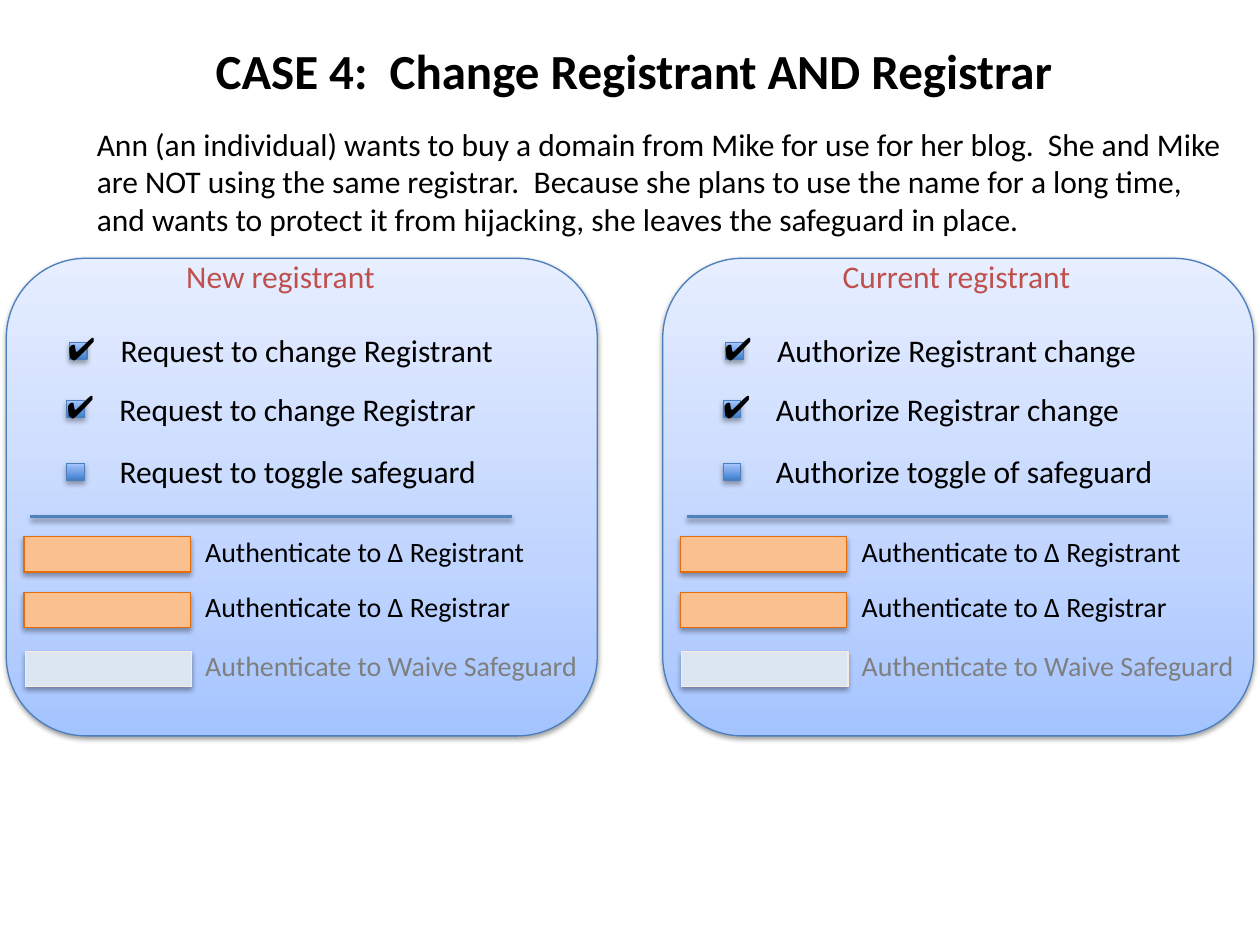
"""Build the slide on changing both the registrant and the registrar of a domain."""
from copy import deepcopy

from pptx import Presentation
from pptx.dml.color import RGBColor
from pptx.enum.shapes import MSO_CONNECTOR, MSO_SHAPE
from pptx.enum.text import MSO_ANCHOR, MSO_AUTO_SIZE, PP_ALIGN
from pptx.oxml import parse_xml
from pptx.oxml.ns import nsdecls, qn
from pptx.util import Inches, Pt

BLACK = RGBColor(0x00, 0x00, 0x00)
GRAY = RGBColor(0x7F, 0x7F, 0x7F)
RED = RGBColor(0xC0, 0x50, 0x4D)
BLUE = RGBColor(0x4F, 0x81, 0xBD)
OUTLINE = RGBColor(0x4B, 0x7E, 0xBC)
SKY = RGBColor(0xA4, 0xC4, 0xFF)
PALE_SKY = RGBColor(0xBF, 0xD4, 0xFF)
MIST = RGBColor(0xE6, 0xEE, 0xFF)
DEEP_BLUE = RGBColor(0x3F, 0x80, 0xCE)
ORANGE = RGBColor(0xFA, 0xC0, 0x90)
DARK_ORANGE = RGBColor(0xE4, 0x6C, 0x0A)
ICE = RGBColor(0xDC, 0xE6, 0xF2)
CREAM = RGBColor(0xFD, 0xEA, 0xDA)

PANEL_STOPS = [(0, SKY), (0.35, PALE_SKY), (1, MIST)]
CHECKBOX_STOPS = [(0, DEEP_BLUE), (1, SKY)]


def add_shadow(sp, alpha, distance):
    sp.element.spPr.append(parse_xml(
        f'<a:effectLst {nsdecls("a")}><a:outerShdw blurRad="{Pt(3.1)}" '
        f'dist="{Pt(distance)}" dir="5400000" rotWithShape="0"><a:srgbClr val="000000">'
        f'<a:alpha val="{alpha * 1000}"/></a:srgbClr></a:outerShdw></a:effectLst>'))


def add_text(shapes, text, x, y, w, h, size=18, color=BLACK, font="Calibri", wrap=False):
    tf = shapes.add_textbox(Inches(x), Inches(y), Inches(w), Inches(h)).text_frame
    tf.word_wrap = wrap
    tf.auto_size = MSO_AUTO_SIZE.SHAPE_TO_FIT_TEXT
    p = tf.paragraphs[0]
    p.text = text
    p.font.name, p.font.size, p.font.color.rgb = font, Pt(size), color


prs = Presentation()
prs.slide_width, prs.slide_height = Inches(10), Inches(7.5)
s = prs.slides.add_slide(prs.slide_layouts[5])

title = s.shapes.title
title.left, title.top, title.width, title.height = (Inches(v) for v in (1.55, 0.27, 6.96, 0.57))
tf = title.text_frame
tf.word_wrap = False
tf.auto_size = MSO_AUTO_SIZE.NONE
tf.vertical_anchor = MSO_ANCHOR.TOP
p = tf.paragraphs[0]
p.text = "CASE 4:  Change Registrant AND Registrar"
p.alignment = PP_ALIGN.CENTER
p.font.name, p.font.size, p.font.bold, p.font.color.rgb = "Calibri", Pt(28), True, BLACK

add_text(s.shapes, "Ann (an individual) wants to buy a domain from Mike for use for her blog.  "
         "She and Mike are NOT using the same registrar.  Because she plans to use the name "
         "for a long time, and wants to protect it from hijacking, she leaves the safeguard "
         "in place.", 0.67, 0.94, 9.17, 1.01, wrap=True)

panels = [
    (0.05, "New registrant", 1.73,
     [("Request to change Registrant", 3.33), ("Request to change Registrar", 3.2),
      ("Request to toggle safeguard", 3.08)]),
    (5.26, "Current registrant", 2.04,
     [("Authorize Registrant change", 3.1), ("Authorize Registrar change", 2.97),
      ("Authorize toggle of safeguard", 3.24)]),
]
option_rows = [(0.5, 2.72, 0.81, 2.58), (0.48, 3.18, 0.8, 3.05), (0.48, 3.68, 0.8, 3.54)]
checks = [(0.39, 2.56), (0.38, 3.02)]
auth_rows = [
    ("Authenticate to Δ Registrant", 2.79, 4.19, BLACK, 0.14, 4.26, ORANGE, DARK_ORANGE),
    ("Authenticate to Δ Registrar", 2.68, 4.63, BLACK, 0.14, 4.7, ORANGE, DARK_ORANGE),
    ("Authenticate to Waive Safeguard", 3.22, 5.1, GRAY, 0.15, 5.17, ICE, CREAM),
]

for left, heading, heading_w, options in panels:
    shapes = s.shapes.add_group_shape().shapes

    gradient_boxes = [(MSO_SHAPE.ROUNDED_RECTANGLE, 0, 2.05, 4.69, 3.79, PANEL_STOPS, 38, 1.6)]
    gradient_boxes += [(MSO_SHAPE.RECTANGLE, x, y, 0.14, 0.13, CHECKBOX_STOPS, 35, 1.8)
                       for x, y, _, _ in option_rows]
    for kind, x, y, w, h, stops, alpha, distance in gradient_boxes:
        sp = shapes.add_shape(kind, Inches(left + x), Inches(y), Inches(w), Inches(h))
        sp.fill.gradient()
        sp.fill.gradient_angle = 90
        gs_list = sp.element.spPr.find(qn("a:gradFill")).find(qn("a:gsLst"))
        while len(gs_list) < len(stops):
            gs_list.append(deepcopy(gs_list[0]))
        for stop, (position, color) in zip(sp.fill.gradient_stops, stops):
            stop.position, stop.color.rgb = position, color
        sp.line.color.rgb, sp.line.width = OUTLINE, Pt(0.75)
        add_shadow(sp, alpha, distance)

    divider = shapes.add_connector(MSO_CONNECTOR.STRAIGHT, Inches(left + 4.01), Inches(4.1),
                                   Inches(left + 0.19), Inches(4.1))
    divider.line.color.rgb, divider.line.width = BLUE, Pt(2)
    add_shadow(divider, 38, 1.6)

    for text, w, y, color, box_x, box_y, fill, line in auth_rows:
        sp = shapes.add_shape(MSO_SHAPE.RECTANGLE, Inches(left + box_x), Inches(box_y),
                              Inches(1.32), Inches(0.28))
        sp.fill.solid()
        sp.fill.fore_color.rgb = fill
        sp.line.color.rgb, sp.line.width = line, Pt(0.75)
        add_shadow(sp, 35, 1.8)
        add_text(shapes, text, left + 1.48, y, w, 0.37, 16, color)

    add_text(shapes, heading, left + 1.33, 1.99, heading_w, 0.4, color=RED)
    for x, y in checks:
        add_text(shapes, "✔", left + x, y, 0.43, 0.4, font="Arial")
    for (text, w), (_, _, x, y) in zip(options, option_rows):
        add_text(shapes, text, left + x, y, w, 0.4)

prs.save("out.pptx")
